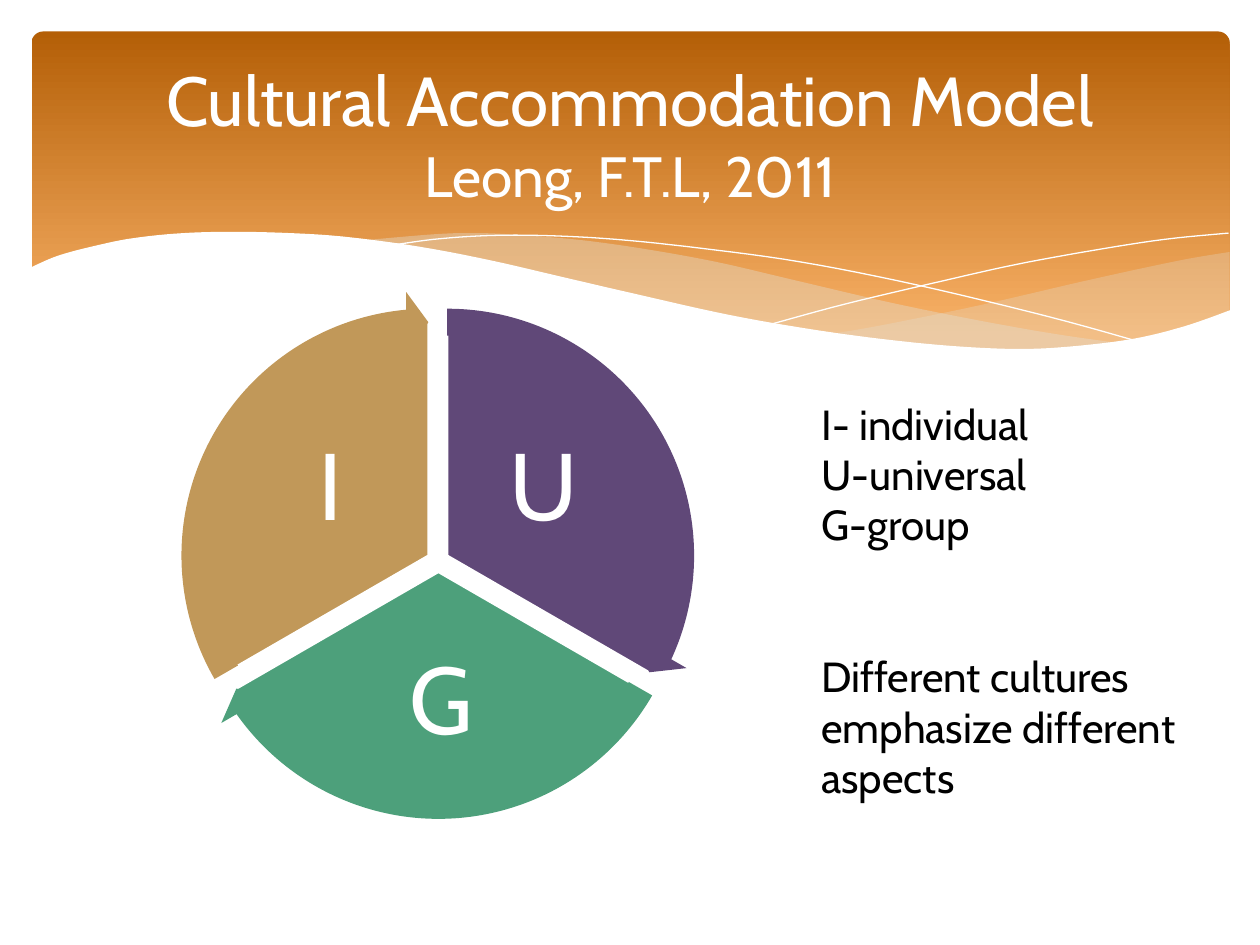
import lxml.etree
import pptx
import pptx.dml.color
import pptx.enum.shapes
import pptx.enum.text
import pptx.oxml.ns
import pptx.util

Inches = pptx.util.Inches
Pt = pptx.util.Pt
RGBColor = pptx.dml.color.RGBColor
SHAPE = pptx.enum.shapes.MSO_SHAPE
CENTER = pptx.enum.text.PP_ALIGN.CENTER
MIDDLE = pptx.enum.text.MSO_ANCHOR.MIDDLE

WHITE = RGBColor(0xFF, 0xFF, 0xFF)
BLACK = RGBColor(0, 0, 0)
RUST = RGBColor(0xB4, 0x5F, 0x07)
APRICOT = RGBColor(0xF9, 0xB2, 0x68)
SAND = RGBColor(0xE3, 0xDE, 0xD1)
PURPLE = RGBColor(0x60, 0x48, 0x78)
GREEN = RGBColor(0x4D, 0xA0, 0x7B)
TAN = RGBColor(0xC1, 0x98, 0x59)
FONT = "Cabin"


def smooth(knots, steps=6):
    padded = [knots[0], *knots, knots[-1]]
    points = [knots[0]]
    for a, b, c, d in zip(padded, padded[1:], padded[2:], padded[3:]):
        for step in range(1, steps + 1):
            t = step / steps
            points.append(tuple(
                q + 0.5 * t * (r - p + t * (2 * p - 5 * q + 4 * r - s + t * (3 * (q - r) + s - p)))
                for p, q, r, s in zip(a, b, c, d)))
    return points


def draw_path(points, closed):
    corners = [(Inches(x), Inches(y)) for x, y in points]
    builder = slide.shapes.build_freeform(*corners[0])
    builder.add_line_segments(corners[1:], close=closed)
    path = builder.convert_to_shape()
    path.shadow.inherit = False
    return path


prs = pptx.Presentation()
prs.slide_width = Inches(10)
prs.slide_height = Inches(7.5)
slide = prs.slides.add_slide(prs.slide_layouts[6])

banner = slide.shapes.add_shape(
    SHAPE.ROUNDED_RECTANGLE, Inches(0.25), Inches(0.25), Inches(9.51), Inches(2.7))
banner.adjustments[0] = 0.034
banner.shadow.inherit = False
banner.line.fill.background()
banner.fill.gradient()
banner.fill.gradient_angle = 270
for stop, position, color in zip(banner.fill.gradient_stops, (0, 0.9), (RUST, APRICOT)):
    stop.position = position
    stop.color.rgb = color

right_top = [(9.76, 2), (9.35, 2.07), (8.61, 2.23), (7.79, 2.42), (7.06, 2.57), (6.61, 2.65)]
right_bottom = [(6.61, 2.65), (7.19, 2.72), (7.69, 2.77), (8.14, 2.78), (8.63, 2.75),
                (9.13, 2.67), (9.49, 2.57), (9.76, 2.47)]
left_top = [(8.93, 2.73), (8.37, 2.65), (7.75, 2.54), (7.06, 2.4), (6.29, 2.22), (5.69, 2.08),
            (5.14, 1.98), (4.65, 1.91), (4.2, 1.87), (3.8, 1.85), (3.44, 1.86), (2.86, 1.91)]
left_bottom = [(2.86, 1.91), (3.42, 1.99), (4.04, 2.11), (4.49, 2.22), (5.3, 2.4), (6.01, 2.55),
               (6.65, 2.66), (7.22, 2.74), (7.73, 2.77), (8.18, 2.78), (8.57, 2.77), (8.93, 2.73)]
page_edge = [(9.77, 2.46), (9.4, 2.59), (8.99, 2.69), (8.5, 2.75), (8.09, 2.77), (7.61, 2.75),
             (7.08, 2.7), (6.48, 2.62), (5.79, 2.5), (5.03, 2.33), (4.47, 2.2), (3.91, 2.07),
             (3.4, 1.97), (2.92, 1.9), (2.5, 1.86), (1.93, 1.84), (1.46, 1.85), (1.06, 1.89),
             (0.76, 1.95), (0.46, 2.03), (0.23, 2.13)]
falling_line = [(3.09, 1.95), (3.44, 1.9), (3.87, 1.87), (4.33, 1.87), (4.89, 1.9), (5.56, 1.97),
                (6.36, 2.08), (7.27, 2.26), (8.31, 2.51), (9.07, 2.72)]
rising_line = [(6.13, 2.57), (6.72, 2.41), (7.48, 2.23), (8.06, 2.1), (8.66, 1.99),
               (9.24, 1.9), (9.75, 1.85)]

for top, bottom, opacity in ((right_top, right_bottom, 29), (left_top, left_bottom, 40)):
    wave = draw_path(smooth(top) + smooth(bottom), True)
    wave.line.fill.background()
    wave.fill.solid()
    wave.fill.fore_color.rgb = SAND
    tint = wave.fill._xPr.find(".//" + pptx.oxml.ns.qn("a:srgbClr"))
    lxml.etree.SubElement(tint, pptx.oxml.ns.qn("a:alpha"), val=str(opacity * 1000))

for knots in (falling_line, rising_line):
    strand = draw_path(smooth(knots), False)
    strand.fill.background()
    strand.line.color.rgb = WHITE
    strand.line.width = Pt(0)

page = draw_path(smooth(page_edge) + [(0.23, 3.29), (9.77, 3.29)], True)
page.line.fill.background()
page.fill.solid()
page.fill.fore_color.rgb = WHITE

sectors = [
    ("U", PURPLE, 1.68, 2.54, (162, 18), (14.725, 161.994), (3.65, 3.33, 1.33, 1.11)),
    ("G", GREEN, 1.61, 2.67, (18, 90), (86.72, 18.005), (2.5, 5.1, 2, 0.98)),
    ("I", TAN, 1.53, 2.54, (90, 162), (158.73, 90), (1.96, 3.33, 1.33, 1.11)),
]
for letter, color, left, top, pie_angles, arrow_angles, label_box in sectors:
    sector = slide.shapes.add_shape(SHAPE.PIE, Inches(left), Inches(top), Inches(3.74), Inches(3.74))
    sector.adjustments[0], sector.adjustments[1] = pie_angles
    sector.shadow.inherit = False
    sector.fill.solid()
    sector.fill.fore_color.rgb = color
    sector.line.color.rgb = WHITE
    sector.line.width = Pt(1.25)

    label = slide.shapes.add_textbox(*map(Inches, label_box)).text_frame
    label.word_wrap = True
    label.vertical_anchor = MIDDLE
    label.margin_left = label.margin_right = label.margin_top = label.margin_bottom = Inches(0.07)
    label.text = letter
    label.paragraphs[0].alignment = CENTER
    label.paragraphs[0].line_spacing = 0.9
    font = label.paragraphs[0].runs[0].font
    font.name, font.size, font.color.rgb = FONT, Pt(54), WHITE

for letter, color, left, top, pie_angles, arrow_angles, label_box in sectors:
    arrow = slide.shapes.add_shape(
        SHAPE.CIRCULAR_ARROW, Inches(left - 0.23), Inches(top - 0.23), Inches(4.2), Inches(4.2))
    for index, value in enumerate((0.051, 3.275, *arrow_angles, 0.059)):
        arrow.adjustments[index] = value
    arrow.shadow.inherit = False
    arrow.fill.solid()
    arrow.fill.fore_color.rgb = color
    arrow.line.fill.background()

title = slide.shapes.add_textbox(Inches(0.5), Inches(0.37), Inches(9), Inches(1.37)).text_frame
title.word_wrap = True
title.vertical_anchor = MIDDLE
title.text = "Cultural Accommodation Model\vLeong, F.T.L, 2011"
title.paragraphs[0].alignment = CENTER
for run, size in zip(title.paragraphs[0].runs, (39.6, 32.4)):
    run.font.name, run.font.size, run.font.color.rgb = FONT, Pt(size), WHITE

legend = slide.shapes.add_textbox(Inches(6.42), Inches(3.11), Inches(3.25), Inches(3.33)).text_frame
legend.word_wrap = True
legend.text = "I- individual\nU-universal\nG-group\nDifferent cultures emphasize different aspects"
legend.paragraphs[-1].space_before = Pt(58)
for paragraph in legend.paragraphs:
    font = paragraph.runs[0].font
    font.name, font.size, font.color.rgb = FONT, Pt(24), BLACK

prs.save("out.pptx")
